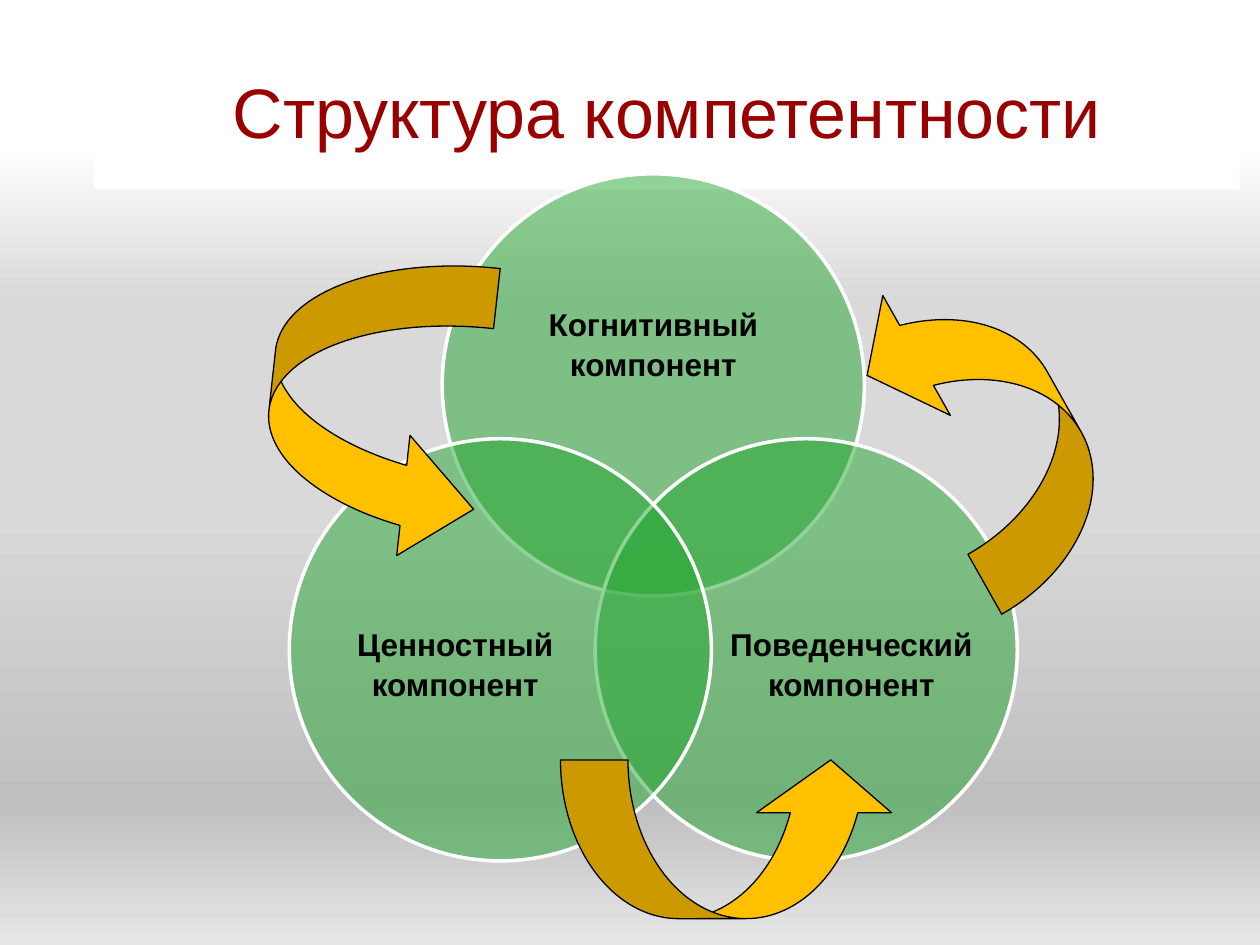
from math import cos, radians, sin

from lxml import etree
from pptx import Presentation
from pptx.dml.color import RGBColor
from pptx.enum.shapes import MSO_SHAPE
from pptx.enum.text import MSO_ANCHOR, PP_ALIGN
from pptx.oxml.ns import qn
from pptx.util import Cm, Pt

RECTANGLE = MSO_SHAPE.RECTANGLE
OVAL = MSO_SHAPE.OVAL
CURVED_UP = MSO_SHAPE.CURVED_UP_ARROW
CURVED_RIGHT = MSO_SHAPE.CURVED_RIGHT_ARROW
MIDDLE = MSO_ANCHOR.MIDDLE
CENTER = PP_ALIGN.CENTER

WHITE = RGBColor(0xFF, 0xFF, 0xFF)
BLACK = RGBColor(0x00, 0x00, 0x00)
DARK_RED = RGBColor(0x99, 0x00, 0x00)
GREEN = RGBColor(0x23, 0xA7, 0x30)
AMBER = RGBColor(0xFF, 0xC0, 0x00)
LIGHT_GREY = RGBColor(0xD9, 0xD9, 0xD9)
MID_GREY = RGBColor(0xBF, 0xBF, 0xBF)
PALE_GREY = RGBColor(0xE6, 0xE6, 0xE6)

FONT = "Arial"
BACKGROUND_STOPS = [(0, WHITE), (15, WHITE), (32, LIGHT_GREY),
                    (54, LIGHT_GREY), (85, MID_GREY), (100, PALE_GREY)]

# Text, angle of the circle, label offset from the circle centre, label size (cm)
COMPONENTS = [
    ("Когнитивный компонент", -90, (0, -0.84), (6.25, 3.84)),
    ("Поведенческий компонент", 30, (0.91, 0.27), (5.1, 4.67)),
    ("Ценностный компонент", 150, (-0.91, 0.27), (5.1, 4.67)),
]

# Shape, box (cm), rotation, adjustments
ARROWS = [
    (CURVED_UP, (4.55, 6.05, 6.1, 4.32), 96.3, (0.282, 0.564, 0.333)),
    (CURVED_UP, (11.3, 15.32, 6.81, 3.2), 0, (0.425, 0.851, 0.333)),
    (CURVED_RIGHT, (18.29, 5.13, 3.2, 6.91), 150.6, (0.433, 0.866, 0.333)),
]


def paint_background(page):
    fill = page.background.fill
    fill.gradient()
    fill.gradient_angle = 270
    stops = page.element.find(".//" + qn("a:gsLst"))
    for stop in list(stops):
        stops.remove(stop)
    for percent, color in BACKGROUND_STOPS:
        stop = etree.SubElement(stops, qn("a:gs"), pos=str(percent * 1000))
        etree.SubElement(stop, qn("a:srgbClr"), val=str(color))


def add_filled_shape(page, kind, box, fill, line=None, width=0):
    shape = page.shapes.add_shape(kind, *map(Cm, box))
    shape.shadow.inherit = False
    shape.fill.solid()
    shape.fill.fore_color.rgb = fill
    if line is None:
        shape.line.fill.background()
    else:
        shape.line.color.rgb = line
        shape.line.width = Pt(width)
    return shape


def write_centred(shape, text, size, color, bold=False):
    frame = shape.text_frame
    frame.word_wrap = True
    frame.vertical_anchor = MIDDLE
    para = frame.paragraphs[0]
    para.alignment = CENTER
    span = para.add_run()
    span.text = text
    span.font.name = FONT
    span.font.size = Pt(size)
    span.font.bold = bold
    span.font.color.rgb = color
    return frame


def add_title(page, box):
    banner = add_filled_shape(page, RECTANGLE, box, WHITE)
    write_centred(banner, "Структура компетентности", 40, DARK_RED)


def add_circle(page, x, y, diameter):
    """Draw a half-transparent circle centred on x, y."""
    box = (x - diameter / 2, y - diameter / 2, diameter, diameter)
    circle = add_filled_shape(page, OVAL, box, GREEN, WHITE, 2)
    color = circle.fill._xPr.find(qn("a:solidFill"))[0]
    etree.SubElement(color, qn("a:alpha"), val="50000")


def add_label(page, text, x, y, width, height):
    """Write a label in a box centred on x, y."""
    box = (x - width / 2, y - height / 2, width, height)
    label = page.shapes.add_textbox(*map(Cm, box))
    frame = write_centred(label, text, 18, BLACK, bold=True)
    frame.margin_left = frame.margin_right = 0
    frame.margin_top = frame.margin_bottom = 0
    frame.paragraphs[0].line_spacing = 1.05


def add_venn(page, center_x, center_y, diameter, spread):
    """Set the circles at equal angles, each spread away from the centre."""
    for text, angle, (shift_x, shift_y), size in COMPONENTS:
        x = center_x + spread * cos(radians(angle))
        y = center_y + spread * sin(radians(angle))
        add_circle(page, x, y, diameter)
        add_label(page, text, x + shift_x, y + shift_y, *size)


def add_arrows(page):
    for kind, box, rotation, adjustments in ARROWS:
        arrow = add_filled_shape(page, kind, box, AMBER, BLACK, 0.75)
        arrow.rotation = rotation
        for index, value in enumerate(adjustments):
            arrow.adjustments[index] = value


def main():
    deck = Presentation()
    deck.slide_width, deck.slide_height = Cm(25.4), Cm(19.05)
    page = deck.slides.add_slide(deck.slide_layouts[6])
    paint_background(page)
    add_title(page, (1.9, 0.64, 23.09, 3.18))
    add_venn(page, 13.17, 11.32, diameter=8.51, spread=3.56)
    add_arrows(page)
    deck.save("out.pptx")


if __name__ == "__main__":
    main()
